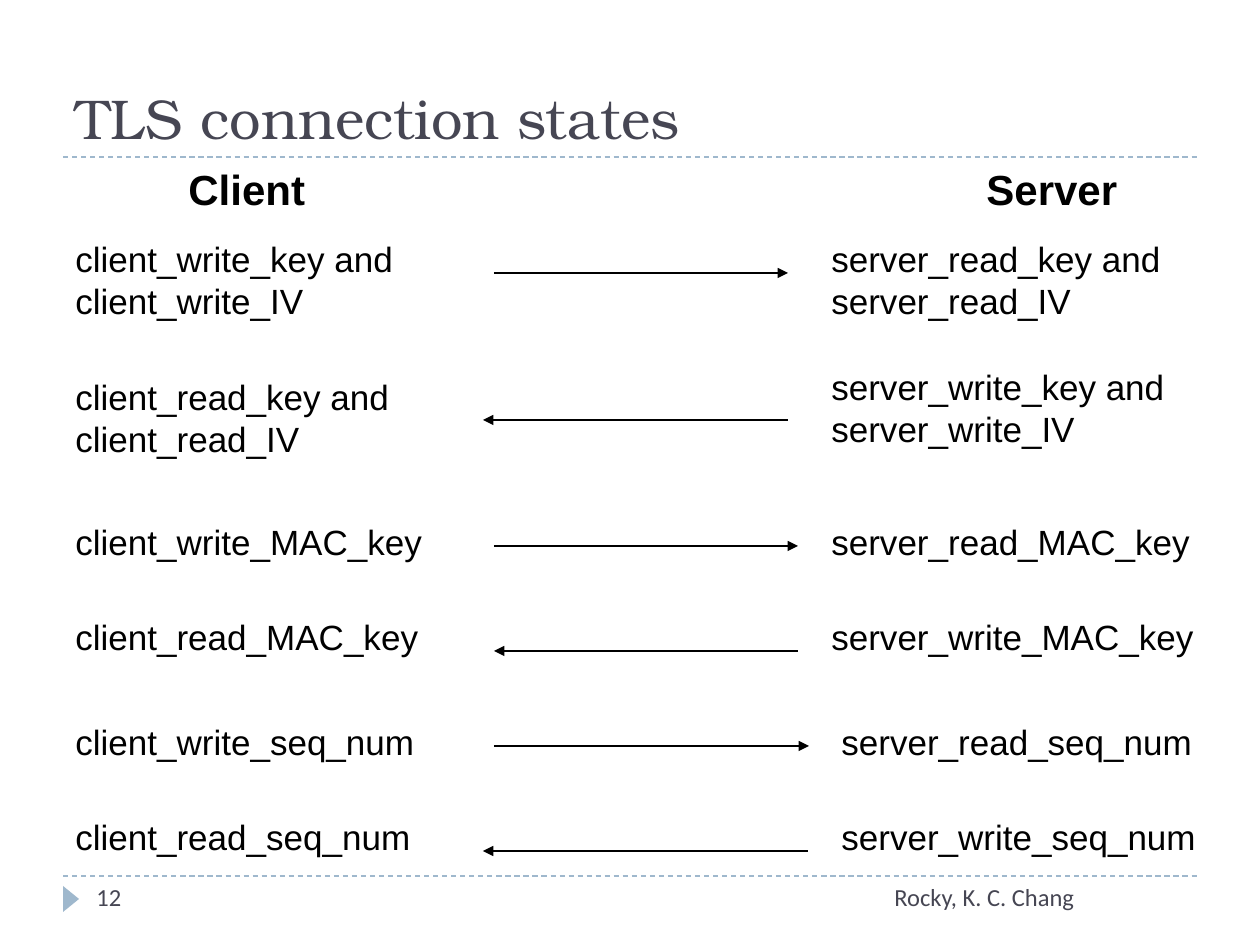
from lxml import etree
from pptx import Presentation
from pptx.dml.color import RGBColor
from pptx.enum.dml import MSO_LINE
from pptx.enum.shapes import MSO_CONNECTOR, MSO_SHAPE
from pptx.enum.text import MSO_ANCHOR
from pptx.oxml.ns import qn
from pptx.util import Emu, Pt

EMU_PER_PX = 914400 / 126
STRAIGHT = MSO_CONNECTOR.STRAIGHT
TRIANGLE = MSO_SHAPE.ISOSCELES_TRIANGLE
DASH = MSO_LINE.DASH
TOP, BOTTOM = MSO_ANCHOR.TOP, MSO_ANCHOR.BOTTOM

BLACK, SLATE, BLUE = "000000", "464653", "9FB8CD"
CLIENT_X = 63

# client text, client y, server text, server x, server y, server width, arrow from, arrow to, arrow y
STATES = [
    ("client_write_key and client_write_IV", 231,
     "server_read_key and server_read_IV", 819, 231, 388, 494, 788, 273),
    ("client_read_key and client_read_IV", 369,
     "server_write_key and server_write_IV", 819, 359, 388, 788, 483, 420),
    ("client_write_MAC_key", 514, "server_read_MAC_key", 819, 514, 431, 494, 798, 546),
    ("client_read_MAC_key", 609, "server_write_MAC_key", 819, 609, 441, 798, 494, 651),
    ("client_write_seq_num", 714, "server_read_seq_num", 829, 714, 431, 494, 809, 746),
    ("client_read_seq_num", 809, "server_write_seq_num", 829, 809, 431, 808, 483, 851),
]


def px(n):
    return Emu(round(n * EMU_PER_PX))


def rgb(color):
    return RGBColor.from_string(color)


def add_text(s, text, x, y, w, h, size, font="Arial", color=BLACK,
             bold=False, anchor=TOP, wrap=True):
    tf = s.shapes.add_textbox(px(x), px(y), px(w), px(h)).text_frame
    tf.word_wrap = wrap
    tf.vertical_anchor = anchor
    tf.text = text
    r = tf.paragraphs[0].runs[0]
    r.font.size = Pt(size)
    r.font.name = font
    r.font.bold = bold
    r.font.color.rgb = rgb(color)


def add_line(s, x1, x2, y, color):
    line = s.shapes.add_connector(STRAIGHT, px(x1), px(y), px(x2), px(y))
    line.line.color.rgb = rgb(color)
    line.line.width = Pt(0.75)
    etree.SubElement(line._element.spPr, qn("a:effectLst"))
    return line


def add_rule(s, y):
    add_line(s, 63, 1197, y, BLUE).line.dash_style = DASH


def add_arrow(s, x1, x2, y):
    line = add_line(s, x1, x2, y, BLACK)
    etree.SubElement(line.line._get_or_add_ln(), qn("a:tailEnd"), type="triangle")


def add_page_marker(s):
    sp = s.shapes.add_shape(TRIANGLE, px(58), px(891), px(26), px(16))
    sp.rotation = 90
    sp.shadow.inherit = False
    sp.fill.solid()
    sp.fill.fore_color.rgb = rgb(BLUE)
    sp.line.fill.background()


def add_state(s, client, client_y, server, server_x, server_y, server_w, x1, x2, arrow_y):
    h = 97 if " and " in client else 54
    client_w = 399 if " and " in client else 431
    add_arrow(s, x1, x2, arrow_y)
    add_text(s, client, CLIENT_X, client_y, client_w, h, 20)
    add_text(s, server, server_x, server_y, server_w, h, 20)


def main():
    prs = Presentation()
    prs.slide_width, prs.slide_height = px(1260), px(945)
    s = prs.slides.add_slide(prs.slide_layouts[6])
    for y in (876, 157):
        add_rule(s, y)
    add_page_marker(s)
    add_text(s, "TLS connection states", 63, 21, 1134, 136, 32,
             "TeX Gyre Bonum", SLATE, anchor=BOTTOM)
    for text, x, w in (("Rocky, K. C. Chang", 882, 315), ("12", 84, 273)):
        add_text(s, text, x, 876, w, 50, 14, "Calibri", SLATE)
    for text, x, w in (("Client", 176, 142), ("Server", 974, 156)):
        add_text(s, text, x, 157, w, 63, 24, bold=True, wrap=False)
    for state in STATES:
        add_state(s, *state)
    prs.save("out.pptx")


if __name__ == "__main__":
    main()
